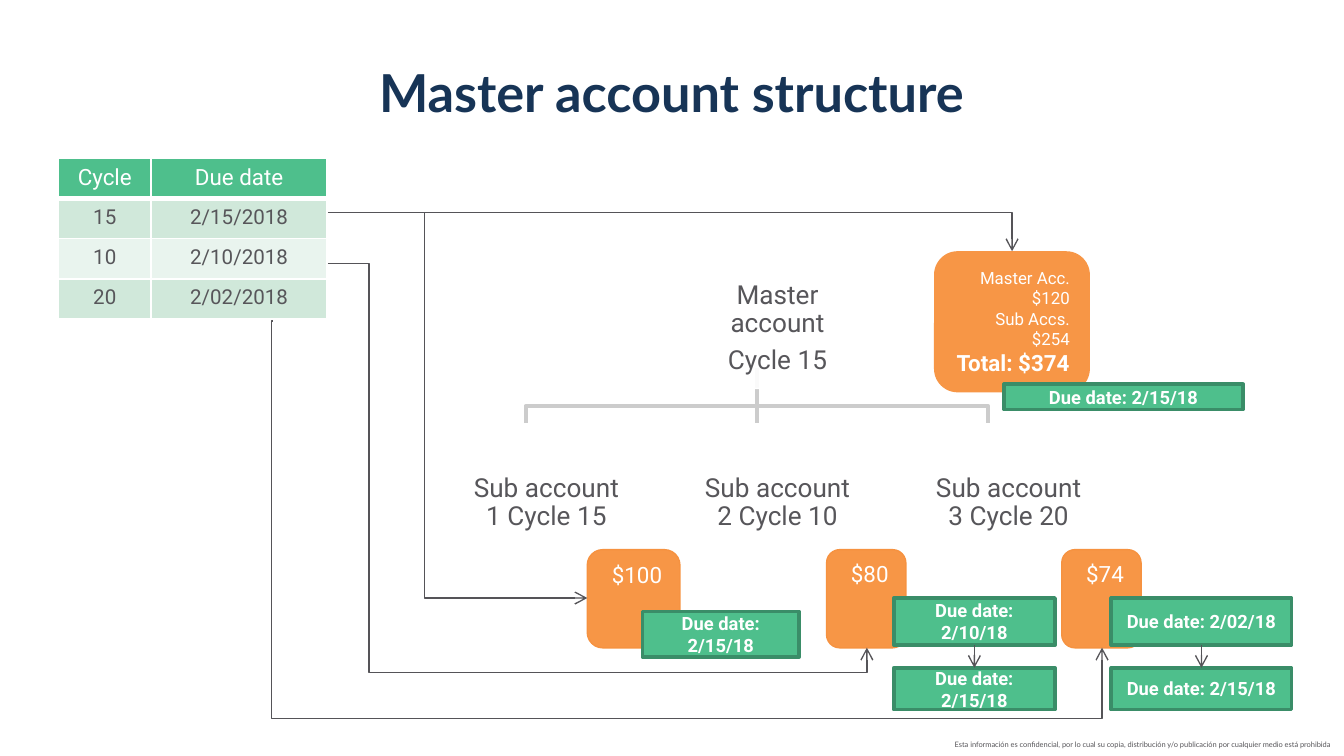
from dataclasses import dataclass

from lxml.etree import SubElement
from pptx import Presentation
from pptx.dml.color import RGBColor
from pptx.enum.shapes import MSO_CONNECTOR, MSO_SHAPE
from pptx.enum.text import MSO_ANCHOR, PP_ALIGN
from pptx.oxml.ns import qn
from pptx.util import Pt


@dataclass(frozen=True)
class Theme:
    heading_font: str = "Lato"
    body_font: str = "Roboto"
    navy: RGBColor = RGBColor(0x17, 0x34, 0x56)
    grey: RGBColor = RGBColor(0x57, 0x56, 0x5A)
    arrow: RGBColor = RGBColor(0x55, 0x54, 0x58)
    branch: RGBColor = RGBColor(0xCC, 0xCC, 0xCC)
    white: RGBColor = RGBColor(0xFF, 0xFF, 0xFF)
    orange: RGBColor = RGBColor(0xF7, 0x96, 0x46)
    orange_edge: RGBColor = RGBColor(0xF6, 0x92, 0x40)
    green: RGBColor = RGBColor(0x4E, 0xBF, 0x8C)
    green_edge: RGBColor = RGBColor(0x3A, 0x8D, 0x68)
    band_dark: RGBColor = RGBColor(0xD0, 0xE8, 0xDA)
    band_light: RGBColor = RGBColor(0xE9, 0xF4, 0xEE)
    title_size: float = 28
    node_size: float = 14
    amount_size: float = 12
    cell_size: float = 11
    date_size: float = 9.8
    detail_size: float = 9
    footer_size: float = 4


THEME = Theme()


def write(para, text, size, color, align=PP_ALIGN.CENTER, bold=False, font=THEME.body_font):
    para.alignment = align
    span = para.add_run()
    span.text = text
    span.font.name = font
    span.font.size = Pt(size)
    span.font.bold = bold
    span.font.color.rgb = color


def add_box(slide, kind, frame, fill, edge=None, edge_width=0.75):
    box = slide.shapes.add_shape(kind, *map(Pt, frame))
    box.shadow.inherit = False
    box.fill.solid()
    box.fill.fore_color.rgb = fill
    if edge is None:
        box.line.fill.background()
    else:
        box.line.color.rgb = edge
        box.line.width = Pt(edge_width)
    box.text_frame.word_wrap = True
    return box


def add_title(slide, text):
    title = slide.shapes.title
    title.left, title.top, title.width, title.height = map(Pt, (161.3, 26.6, 396.7, 45.4))
    title.text_frame.vertical_anchor = MSO_ANCHOR.MIDDLE
    write(title.text_frame.paragraphs[0], text, THEME.title_size, THEME.navy,
          bold=True, font=THEME.heading_font)


def add_footer(slide, text):
    box = slide.shapes.add_textbox(*map(Pt, (433.4, 393.1, 286.6, 12.2)))
    box.text_frame.word_wrap = True
    write(box.text_frame.paragraphs[0], text, THEME.footer_size, THEME.grey,
          PP_ALIGN.RIGHT, font=THEME.heading_font)


def add_node(slide, left, top, lines):
    """Translucent white card with the name of one account."""
    card = add_box(slide, MSO_SHAPE.ROUNDED_RECTANGLE, (left, top, 101.5, 64.1),
                   THEME.white, THEME.white)
    card.adjustments[0] = 0.1
    color = card.fill._xPr.find(qn("a:solidFill"))[0]
    SubElement(color, qn("a:alpha")).set("val", "90000")
    frame = card.text_frame
    frame.vertical_anchor = MSO_ANCHOR.MIDDLE
    frame.margin_left = frame.margin_right = Pt(5)
    frame.margin_top = frame.margin_bottom = Pt(5)
    for index, line in enumerate(lines):
        para = frame.add_paragraph() if index else frame.paragraphs[0]
        para.line_spacing = 0.9
        para.space_after = Pt(5)
        write(para, line, THEME.node_size, THEME.grey)


def add_branch(slide, center, side):
    """Elbow from the master account to an outer sub account."""
    top, bar, bottom = 197.3, 217.4, 226.8
    builder = slide.shapes.build_freeform(Pt(center), Pt(top))
    points = [(center, bar), (side, bar), (side, bottom)]
    builder.add_line_segments([(Pt(x), Pt(y)) for x, y in points], close=False)
    branch = builder.convert_to_shape()
    branch.shadow.inherit = False
    branch.fill.background()
    branch.line.color.rgb = THEME.branch
    branch.line.width = Pt(2)


def add_line(slide, kind, begin, end, color=THEME.arrow, width=0.75, arrow=True):
    line = slide.shapes.add_connector(kind, *map(Pt, (*begin, *end)))
    line.line.color.rgb = color
    line.line.width = Pt(width)
    if arrow:
        SubElement(line.line._get_or_add_ln(), qn("a:tailEnd")).set("type", "arrow")
    SubElement(line._element.spPr, qn("a:effectLst"))
    return line


def set_bend(line, preset, adjustments=()):
    geometry = line._element.spPr.find(qn("a:prstGeom"))
    geometry.set("prst", preset)
    guides = geometry.find(qn("a:avLst"))
    if guides is None:
        guides = SubElement(geometry, qn("a:avLst"))
    for number, value in enumerate(adjustments, 1):
        guide = SubElement(guides, qn("a:gd"))
        guide.set("name", f"adj{number}")
        guide.set("fmla", f"val {round(value * 100000)}")


def add_across_down(slide, begin, end):
    set_bend(add_line(slide, MSO_CONNECTOR.ELBOW, begin, end), "bentConnector2")


def add_down_across(slide, begin, end):
    """Mirrored elbow, turned a quarter about the middle of its frame."""
    (x1, y1), (x2, y2) = begin, end
    middle_x, middle_y = (x1 + x2) / 2, (y1 + y2) / 2
    half_width, half_height = (y2 - y1) / 2, (x2 - x1) / 2
    line = add_line(slide, MSO_CONNECTOR.ELBOW,
                    (middle_x + half_width, middle_y - half_height),
                    (middle_x - half_width, middle_y + half_height))
    line.rotation = 270
    set_bend(line, "bentConnector2")


def add_under(slide, begin, end, turn):
    """Route that runs below its end point and rises to it."""
    line = add_line(slide, MSO_CONNECTOR.ELBOW, begin, end)
    ratios = [(turn[i] - begin[i]) / (end[i] - begin[i]) for i in range(2)]
    set_bend(line, "bentConnector4", ratios)


def add_amount(slide, left, width, text):
    box = add_box(slide, MSO_SHAPE.ROUNDED_RECTANGLE, (left, 294.5, width, 52.6),
                  THEME.orange, THEME.orange_edge)
    box.text_frame.vertical_anchor = MSO_ANCHOR.TOP
    write(box.text_frame.paragraphs[0], text, THEME.amount_size, THEME.white, PP_ALIGN.RIGHT)


def add_total(slide):
    box = add_box(slide, MSO_SHAPE.ROUNDED_RECTANGLE, (500.4, 134.6, 83.5, 75.6), THEME.orange)
    frame = box.text_frame
    frame.vertical_anchor = MSO_ANCHOR.MIDDLE
    for index, line in enumerate(["Master Acc. $120", "Sub Accs. $254", "Total: $374"]):
        para = frame.add_paragraph() if index else frame.paragraphs[0]
        total = index == 2
        size = THEME.amount_size if total else THEME.detail_size
        write(para, line, size, THEME.white, PP_ALIGN.RIGHT, bold=total)


def add_due_date(slide, frame, date):
    box = add_box(slide, MSO_SHAPE.RECTANGLE, frame, THEME.green, THEME.green_edge, 2)
    box.text_frame.vertical_anchor = MSO_ANCHOR.MIDDLE
    write(box.text_frame.paragraphs[0], f"Due date: {date}", THEME.date_size, THEME.white, bold=True)


def add_cell_borders(cell, bottom):
    properties = cell._tc.get_or_add_tcPr()
    for side, width in (("L", 1), ("R", 1), ("T", 1), ("B", bottom)):
        border = SubElement(properties, qn(f"a:ln{side}"))
        border.set("w", str(Pt(width)))
        fill = SubElement(border, qn("a:solidFill"))
        SubElement(fill, qn("a:srgbClr")).set("val", str(THEME.white))


def add_cycle_table(slide, rows):
    table = slide.shapes.add_table(len(rows), 2, *map(Pt, (31.3, 84.6, 144, 86.4))).table
    for column, width in zip(table.columns, (49.7, 94.3)):
        column.width = Pt(width)
    for r, values in enumerate(rows):
        table.rows[r].height = Pt(21.6)
        band = THEME.band_dark if r % 2 else THEME.band_light
        for c, value in enumerate(values):
            cell = table.cell(r, c)
            add_cell_borders(cell, 1 if r else 3)
            cell.fill.solid()
            cell.fill.fore_color.rgb = band if r else THEME.green
            write(cell.text_frame.paragraphs[0], value,
                  THEME.cell_size if r else THEME.amount_size,
                  THEME.grey if r else THEME.white)


def main():
    deck = Presentation()
    deck.slide_width, deck.slide_height = Pt(720), Pt(405)
    slide = deck.slides.add_slide(deck.slide_layouts[5])
    add_footer(slide, "Esta información es confidencial, por lo cual su copia, distribución "
                      "y/o publicación por cualquier medio está prohibida")
    add_title(slide, "Master account structure")

    # Account tree
    center, step = 405.4, 123.8
    add_branch(slide, center, center + step)
    add_line(slide, MSO_CONNECTOR.STRAIGHT, (center, 197.3), (center, 226.8),
             THEME.branch, 2, arrow=False)
    add_branch(slide, center, center - step)
    add_node(slide, 365.8, 144, ["Master account", "Cycle 15"])
    for index, cycle in enumerate((15, 10, 20)):
        add_node(slide, 242 + index * step, 237.6, [f"Sub account {index + 1} Cycle {cycle}"])

    # Amounts
    add_total(slide)
    for left, width, text in ((314.6, 49.7, "$100"), (442.8, 42.5, "$80"), (568.8, 42.5, "$74")):
        add_amount(slide, left, width, text)

    # Cycles and their routes to the amounts
    add_cycle_table(slide, [("Cycle", "Due date"), ("15", "2/15/2018"),
                            ("10", "2/10/2018"), ("20", "2/02/2018")])
    add_across_down(slide, (175.7, 113.8), (542.2, 134.6))
    add_under(slide, (175.7, 141.1), (464.4, 347), (197.5, 360.4))
    add_under(slide, (146.2, 172.1), (590.4, 347), (145.4, 385.2))
    add_down_across(slide, (227.5, 113.8), (314.6, 320.4))

    # Due dates, with the change for two sub accounts
    add_due_date(slide, (537.8, 205.9, 128.2, 13.5), "2/15/18")
    add_due_date(slide, (344.2, 327.6, 83.9, 24.5), "2/15/18")
    for left, width, date in ((478.8, 86.4, "2/10/18"), (595.4, 96.5, "2/02/18")):
        middle = left + width / 2
        add_due_date(slide, (left, 320.4, width, 25.2), date)
        add_due_date(slide, (left, 357.8, width, 22.3), "2/15/18")
        add_line(slide, MSO_CONNECTOR.STRAIGHT, (middle, 345.6), (middle, 357.8))

    deck.save("out.pptx")


if __name__ == "__main__":
    main()
